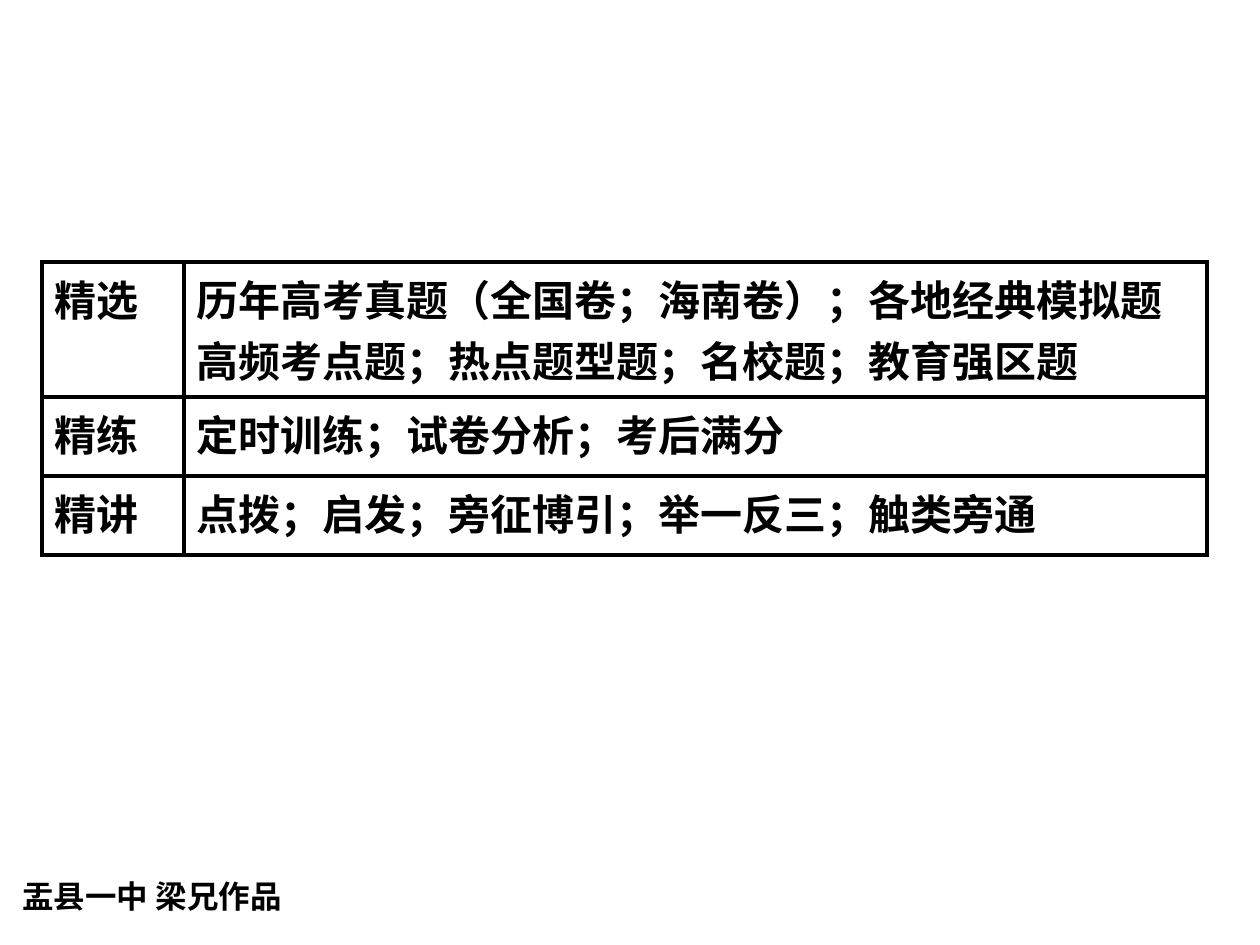
from lxml import etree
from pptx import Presentation
from pptx.dml.color import RGBColor
from pptx.enum.text import MSO_ANCHOR
from pptx.oxml.ns import qn
from pptx.util import Pt

PX = 914400 // 126
TOP = MSO_ANCHOR.TOP
COLORS = {"ink": "000000", "paper": "FFFFFF"}
FONT = "Noto Sans CJK SC"
BORDER_PT = 3

FOOTER = "盂县一中 梁兄作品"
ROWS = [
    ["精选", "历年高考真题（全国卷；海南卷）；各地经典模拟题\n高频考点题；热点题型题；名校题；教育强区题"],
    ["精练", "定时训练；试卷分析；考后满分"],
    ["精讲", "点拨；启发；旁征博引；举一反三；触类旁通"],
]


class Deck:
    def __init__(self, width, height):
        self.prs = Presentation()
        self.prs.slide_width, self.prs.slide_height = width * PX, height * PX
        self.s = self.prs.slides.add_slide(self.prs.slide_layouts[6])

    def set_text(self, tf, text, size):
        tf.text = text
        formats = {"name": FONT, "size": Pt(size), "bold": True}
        for p in tf.paragraphs:
            for r in p.runs:
                for name, value in formats.items():
                    setattr(r.font, name, value)
                r.font.color.rgb = RGBColor.from_string(COLORS["ink"])
                latin = r._r.rPr.find(qn("a:latin"))
                latin.addnext(etree.Element(qn("a:ea"), typeface=FONT))

    def text(self, x, y, w, h, text, size):
        sp = self.s.shapes.add_textbox(x * PX, y * PX, w * PX, h * PX)
        sp.text_frame.word_wrap = True
        self.set_text(sp.text_frame, text, size)

    def border(self, cell):
        tc_pr = cell._tc.get_or_add_tcPr()
        for side in ("lnL", "lnR", "lnT", "lnB"):
            ln = etree.SubElement(tc_pr, qn(f"a:{side}"), w=str(Pt(BORDER_PT)))
            fill = etree.SubElement(ln, qn("a:solidFill"))
            etree.SubElement(fill, qn("a:srgbClr"), val=COLORS["ink"])

    def table(self, x, y, widths, heights, rows, size):
        frame = self.s.shapes.add_table(
            len(rows), len(widths), x * PX, y * PX, sum(widths) * PX, sum(heights) * PX)
        table = frame.table
        for column, width in zip(table.columns, widths):
            column.width = width * PX
        for row, height, texts in zip(table.rows, heights, rows):
            row.height = height * PX
            for cell, text in zip(row.cells, texts):
                self.set_text(cell.text_frame, text, size)
                cell.vertical_anchor = TOP
                self.border(cell)
                cell.fill.solid()
                cell.fill.fore_color.rgb = RGBColor.from_string(COLORS["paper"])


def main():
    deck = Deck(1260, 945)
    deck.text(10, 871, 294, 53, FOOTER, 18)
    deck.table(42, 262, [142, 1023], [135, 79, 79], ROWS, 24)
    deck.prs.save("out.pptx")


if __name__ == "__main__":
    main()
